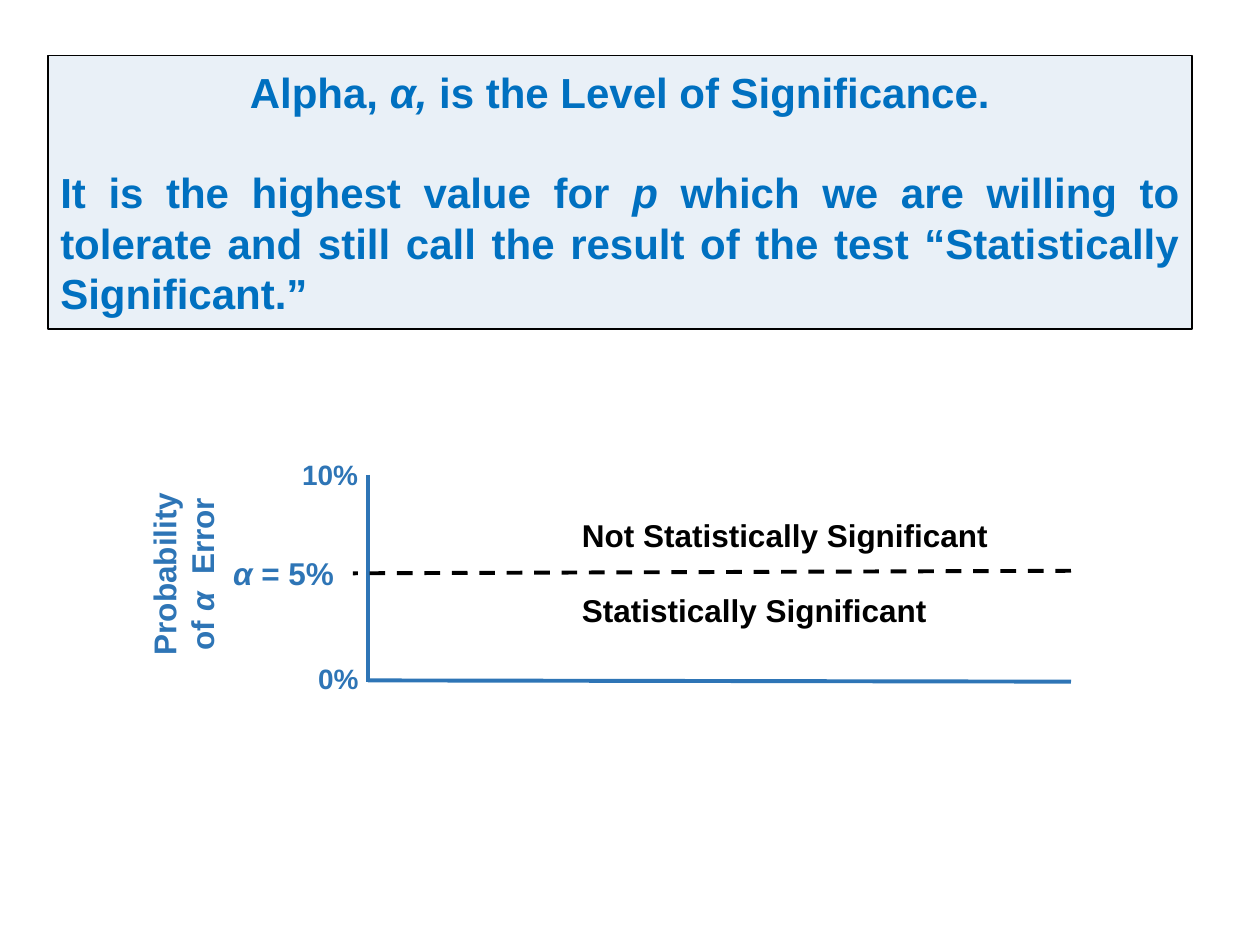
from dataclasses import dataclass

from lxml import etree
from pptx import Presentation
from pptx import util as u
from pptx.dml.color import RGBColor
from pptx.enum import dml, shapes, text
from pptx.oxml.ns import qn
from pptx.slide import Slide

COLORS = {"blue": "2E75B6", "title": "0070C0", "black": "000000"}
ALIGN = text.PP_ALIGN


def color(name):
    """Return the named palette colour."""
    return RGBColor.from_string(COLORS[name])


def add_text(paragraph, content, size=18, fill="blue", italics=(), align=ALIGN.CENTER, before=0):
    """Write content into a paragraph, with the pieces listed in italics slanted."""
    paragraph.alignment = align
    if before:
        paragraph.space_before = u.Pt(before)
    pieces = [content]
    for italic in italics:
        head, tail = pieces.pop().split(italic, 1)
        pieces += [head, italic, tail]
    for piece in filter(None, pieces):
        run = paragraph.add_run()
        run.text = piece
        run.font.name = "Arial"
        run.font.size = u.Pt(size)
        run.font.bold = True
        run.font.italic = piece in italics
        run.font.color.rgb = color(fill)


@dataclass
class Diagram:
    """Draws styled elements on the current slide."""

    slide: Slide
    line_width: float = 2.25

    def panel(self, left, top, width, height, fill="blue", opacity=10):
        """Add a translucent outlined panel and return its text frame."""
        shape = self.slide.shapes.add_shape(
            shapes.MSO_SHAPE.RECTANGLE, *map(u.Inches, (left, top, width, height)))
        shape.shadow.inherit = False
        shape.fill.solid()
        shape.fill.fore_color.rgb = color(fill)
        fill_color = shape.fill._xPr.find(qn("a:solidFill"))[0]
        etree.SubElement(fill_color, qn("a:alpha"), val=str(opacity * 1000))
        shape.line.color.rgb = color("black")
        shape.line.width = u.Pt(1)
        shape.text_frame.word_wrap = True
        shape.text_frame.vertical_anchor = text.MSO_ANCHOR.MIDDLE
        return shape.text_frame

    def label(self, left, top, width, height, *lines, rotation=0, **style):
        """Add a text box with one paragraph for each line."""
        shape = self.slide.shapes.add_textbox(*map(u.Inches, (left, top, width, height)))
        shape.rotation = rotation
        frame = shape.text_frame
        frame.word_wrap = True
        for index, (content, italics) in enumerate(lines):
            paragraph = frame.add_paragraph() if index else frame.paragraphs[0]
            add_text(paragraph, content, italics=italics, **style)

    def line(self, start, end, stroke="blue", dash=None):
        """Add a straight line between two points."""
        connector = self.slide.shapes.add_connector(
            shapes.MSO_CONNECTOR.STRAIGHT, *map(u.Inches, (*start, *end)))
        connector.line.color.rgb = color(stroke)
        connector.line.width = u.Pt(self.line_width)
        if dash:
            connector.line.dash_style = dash
        etree.SubElement(connector._element.spPr, qn("a:effectLst"))


def main():
    """Build the level of significance slide."""
    presentation = Presentation()
    presentation.slide_width, presentation.slide_height = u.Inches(10), u.Inches(7.5)
    diagram = Diagram(presentation.slides.add_slide(presentation.slide_layouts[6]))

    definition = diagram.panel(0.38, 0.44, 9.08, 2.17)
    add_text(definition.paragraphs[0], "Alpha, α, is the Level of Significance.",
             size=24, fill="title", italics=["α,"])
    add_text(definition.add_paragraph(),
             "It is the highest value for p which we are willing to tolerate and still call "
             "the result of the test “Statistically Significant.”",
             size=24, fill="title", italics=["p"], align=ALIGN.JUSTIFY, before=28.8)

    axis, right, base = 2.92, 8.5, 5.4
    diagram.line((axis, 3.77), (axis, base + 0.01))
    diagram.line((right, 4.53), (2.8, 4.55), stroke="black", dash=dml.MSO_LINE.DASH)
    diagram.line((right, base + 0.01), (axis, base))

    diagram.label(2.24, 3.58, 0.76, 0.37, ("10%", []), size=16)
    diagram.label(2.4, 5.2, 0.57, 0.37, ("0%", []), size=16)
    diagram.label(1.63, 4.35, 1.24, 0.4, ("α = 5%", ["α"]))
    diagram.label(0.44, 4.2, 2.03, 0.71, ("Probability", []), ("of α  Error", ["α"]), rotation=270)
    for top, width, verdict in ((4.05, 3.51, "Not Statistically Significant"),
                                (4.64, 2.96, "Statistically Significant")):
        diagram.label(4.52, top, width, 0.4, (verdict, []), fill="black", align=ALIGN.LEFT)

    presentation.save("out.pptx")


if __name__ == "__main__":
    main()
